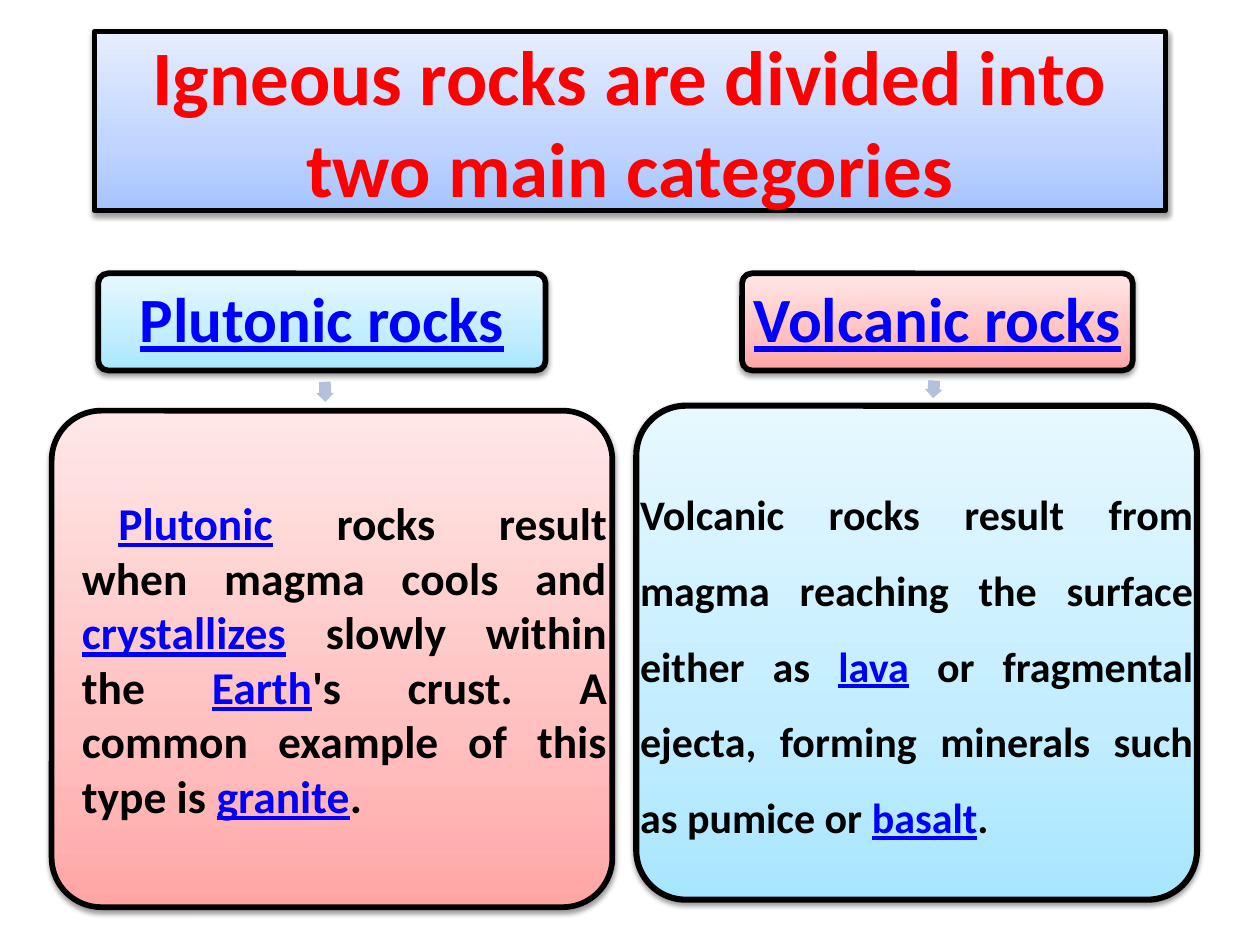
from copy import deepcopy

from lxml.etree import SubElement
from pptx import Presentation
from pptx.dml.color import RGBColor
from pptx.enum.shapes import MSO_SHAPE
from pptx.enum.text import MSO_ANCHOR, PP_ALIGN
from pptx.oxml.ns import qn
from pptx.util import Inches, Pt

COLORS = {
    "black": "000000",
    "title": "FF0000",
    "link": "0000FF",
    "arrow": "B3C1DB",
}
GRADIENTS = {
    "blue": ("A4C4FF", "BFD4FF", "E6EEFF"),
    "cyan": ("A7E6FF", "C1EDFF", "E7F8FF"),
    "pink": ("FFA6A5", "FFC0BF", "FFE7E7"),
}
STOPS = (0, 0.35, 1)


class Deck:
    font = "Calibri"

    def __init__(self, prs):
        self.s = prs.slides.add_slide(prs.slide_layouts[6])

    def rgb(self, name):
        return RGBColor.from_string(COLORS[name])

    def panel(self, box, gradient, line_width, shape=MSO_SHAPE.ROUNDED_RECTANGLE):
        sp = self.s.shapes.add_shape(shape, *map(Inches, box))
        if shape == MSO_SHAPE.ROUNDED_RECTANGLE:
            sp.adjustments[0] = 0.1
        sp.fill.gradient()
        sp.fill.gradient_angle = 90
        first = sp.fill._xPr.find(".//" + qn("a:gs"))
        first.addnext(deepcopy(first))
        for stop, position, color in zip(sp.fill.gradient_stops, STOPS, GRADIENTS[gradient]):
            stop.position = position
            stop.color.rgb = RGBColor.from_string(color)
        sp.line.color.rgb = self.rgb("black")
        sp.line.width = Pt(line_width)
        self.shadow(sp)

    def shadow(self, sp):
        sp.shadow.inherit = False
        effects = sp._element.spPr.find(qn("a:effectLst"))
        outer = SubElement(effects, qn("a:outerShdw"), blurRad=str(Pt(3.1)),
                           dist=str(Pt(1.6)), dir="5400000", rotWithShape="0")
        color = SubElement(outer, qn("a:srgbClr"), val=COLORS["black"])
        SubElement(color, qn("a:alpha"), val="38000")

    def text(self, box, words, size, inset, color="black", align=PP_ALIGN.CENTER,
             spacing=1.0, margin=0, indent=0):
        tf = self.s.shapes.add_textbox(*map(Inches, box)).text_frame
        tf.word_wrap = True
        tf.vertical_anchor = MSO_ANCHOR.MIDDLE
        tf.margin_left = tf.margin_right = Inches(inset)
        tf.margin_top = tf.margin_bottom = Inches(min(inset, 0.05))
        p = tf.paragraphs[0]
        p.alignment = align
        p.line_spacing = spacing
        if margin:
            pPr = p._p.get_or_add_pPr()
            pPr.set("marL", str(Inches(margin)))
            pPr.set("indent", str(Inches(indent)))
        for i, part in enumerate(words.split("|")):
            if not part:
                continue
            linked = i % 2 == 1
            r = p.add_run()
            r.text = part
            r.font.name = self.font
            r.font.size = Pt(size)
            r.font.bold = True
            r.font.underline = linked
            r.font.color.rgb = self.rgb("link" if linked else color)

    def title(self, box, words):
        self.panel(box, "blue", 3, MSO_SHAPE.RECTANGLE)
        self.text(box, words, 44, 0.1, "title")

    def heading(self, box, words, gradient):
        self.panel(box, gradient, 3.25)
        self.text(box, words, 36, 0.05, spacing=0.9)

    def body(self, box, words, gradient, line_width, size, inset, **layout):
        self.panel(box, gradient, line_width)
        self.text(box, words, size, inset, align=PP_ALIGN.JUSTIFY, **layout)

    def arrow(self, box, rotation):
        sp = self.s.shapes.add_shape(MSO_SHAPE.RIGHT_ARROW, *map(Inches, box))
        sp.adjustments[0] = 0.667
        sp.adjustments[1] = 0.5
        sp.rotation = rotation
        sp.fill.solid()
        sp.fill.fore_color.rgb = self.rgb("arrow")
        sp.line.fill.background()
        sp.shadow.inherit = False


def main():
    prs = Presentation()
    prs.slide_width, prs.slide_height = Inches(10), Inches(7.5)
    deck = Deck(prs)

    deck.heading((0.78, 2.17, 3.55, 0.77), "|Plutonic rocks|", "cyan")
    deck.arrow((2.5, 3.04, 0.16, 0.14), 88.3)
    deck.body(
        (0.41, 3.26, 4.45, 3.94),
        "|Plutonic| rocks result when magma cools and |crystallizes| slowly "
        "within the |Earth|'s crust. A common example of this type is |granite|.",
        "pink", 3.25, 26, 0.04, margin=0.2, indent=0.29)

    deck.heading((5.89, 2.17, 3.1, 0.77), "|Volcanic rocks|", "pink")
    deck.arrow((7.34, 3.02, 0.14, 0.14), 93.6)
    deck.body(
        (5.05, 3.22, 4.45, 3.92),
        "Volcanic rocks result from magma reaching the surface either as |lava"
        "| or fragmental ejecta, forming minerals such as pumice or |basalt|.",
        "cyan", 3.5, 24, 0.03, spacing=1.5)

    deck.title((0.75, 0.25, 8.5, 1.42), "Igneous rocks are divided into two main categories")
    prs.save("out.pptx")


if __name__ == "__main__":
    main()
